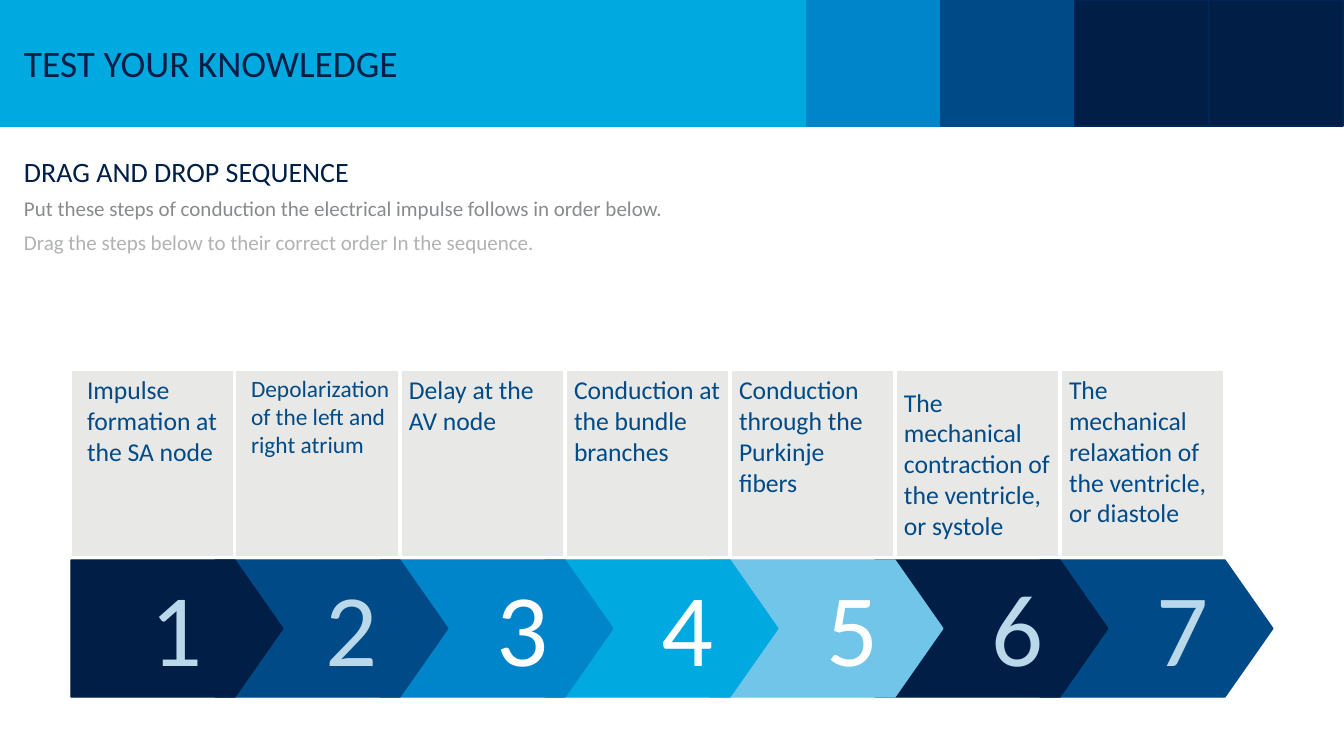
import pptx
import pptx.util
import pptx.dml.color
import pptx.enum.shapes
import pptx.enum.text

SHAPE = pptx.enum.shapes.MSO_SHAPE
ANCHOR = pptx.enum.text.MSO_ANCHOR
NAVY, BLUE, AZURE, CYAN, SKY = "001E46", "004B87", "0085CA", "00A9E0", "71C5E8"
PALE, WHITE, GREY = "B9D9EB", "FFFFFF", "E8E8E7"


def px(n):
    return pptx.util.Emu(round(n * 914400 / 84))


def rgb(value):
    return pptx.dml.color.RGBColor.from_string(value)


class Deck:
    """Holds the text style and the current slide."""

    font = "Calibri"

    def __init__(self):
        self.prs = pptx.Presentation()
        self.prs.slide_width, self.prs.slide_height = px(1344), px(756)
        self.s = self.prs.slides.add_slide(self.prs.slide_layouts[6])

    def label(self, sp, text, size, color, anchor=ANCHOR.TOP, indent=0, spacing=None, wrap=True):
        tf = sp.text_frame
        tf.word_wrap = wrap
        tf.vertical_anchor = anchor
        tf.margin_left = px(8 + indent)
        tf.margin_right = px(8)
        p = tf.paragraphs[0]
        p.alignment = pptx.enum.text.PP_ALIGN.LEFT
        p.line_spacing = spacing
        r = p.add_run()
        r.text = text
        r.font.name = self.font
        r.font.size = pptx.util.Pt(size)
        r.font.color.rgb = rgb(color)

    def shape(self, kind, x, y, w, h, fill, line=None):
        sp = self.s.shapes.add_shape(kind, px(x), px(y), px(w), px(h))
        sp.shadow.inherit = False
        sp.fill.solid()
        sp.fill.fore_color.rgb = rgb(fill)
        sp.line.color.rgb = rgb(line or fill)
        sp.line.width = pptx.util.Pt(1)
        return sp

    def text(self, x, y, w, h, *content, **style):
        sp = self.s.shapes.add_textbox(px(x), px(y), px(w), px(h))
        self.label(sp, *content, **style)
        return sp

    def arrow(self, x, y, w, h, fill):
        sp = self.shape(SHAPE.PENTAGON, x, y, w, h, fill)
        sp.adjustments[0] = 0.35

    def digit(self, x, y, number, color):
        sp = self.text(x, y, 74, 133, str(number), 88, color, wrap=False)
        sp.text_frame.auto_size = pptx.enum.text.MSO_AUTO_SIZE.SHAPE_TO_FIT_TEXT


STEPS = [
    ("Impulse formation at the SA node", NAVY, PALE),
    ("Depolarization of the left and right atrium", BLUE, PALE),
    ("Delay at the AV node", AZURE, WHITE),
    ("Conduction at the bundle branches", CYAN, WHITE),
    ("Conduction through the Purkinje fibers", SKY, WHITE),
    ("The mechanical contraction of the ventricle, or systole", NAVY, PALE),
    ("The mechanical relaxation of the ventricle, or diastole", BLUE, PALE),
]
INTRO = [
    (154, 41, "DRAG AND DROP SEQUENCE", 24, NAVY, ANCHOR.TOP),
    (196, 28, "Put these steps of conduction the electrical impulse follows in order below.",
     18, "888B8D", ANCHOR.MIDDLE),
    (228, 31, "Drag the steps below to their correct order In the sequence.",
     18, "B1B3B3", ANCHOR.TOP),
]
PITCH = 165
DIGIT_SHIFT = {0: -16, 1: -6}


def main():
    deck = Deck()
    banner = deck.shape(SHAPE.RECTANGLE, 0, 0, 807, 126, CYAN)
    deck.label(banner, "TEST YOUR KNOWLEDGE", 32, NAVY, ANCHOR.MIDDLE, indent=16)
    for i, (fill, line) in enumerate([(AZURE, AZURE), (BLUE, BLUE), (NAVY, "002554"), (NAVY, "002554")]):
        deck.shape(SHAPE.RECTANGLE, 807 + 134 * i, 0, 134, 126, fill, line)

    for y, h, text, size, color, anchor in INTRO:
        deck.text(0, y, 1159, h, text, size, color, anchor=anchor, indent=16, spacing=0.9)

    for i, (text, fill, color) in enumerate(STEPS):
        box = deck.shape(SHAPE.RECTANGLE, 71 + PITCH * i - (i == 1), 370, 163 + (i == 1), 187, GREY, WHITE)
        deck.label(box, text, 20 if i == 1 else 22, BLUE,
                   ANCHOR.MIDDLE if i == 5 else ANCHOR.TOP, indent=8 if i < 2 else 0)

    for i, (text, fill, color) in reversed(list(enumerate(STEPS))):
        left = 50 + PITCH * i if i else 71
        deck.arrow(left, 560, 283 + PITCH * i - left, 137, fill)

    for i, (text, fill, color) in enumerate(STEPS):
        deck.digit(159 + PITCH * i + DIGIT_SHIFT.get(i, 0), 560, i + 1, color)

    deck.prs.save("out.pptx")


if __name__ == "__main__":
    main()
